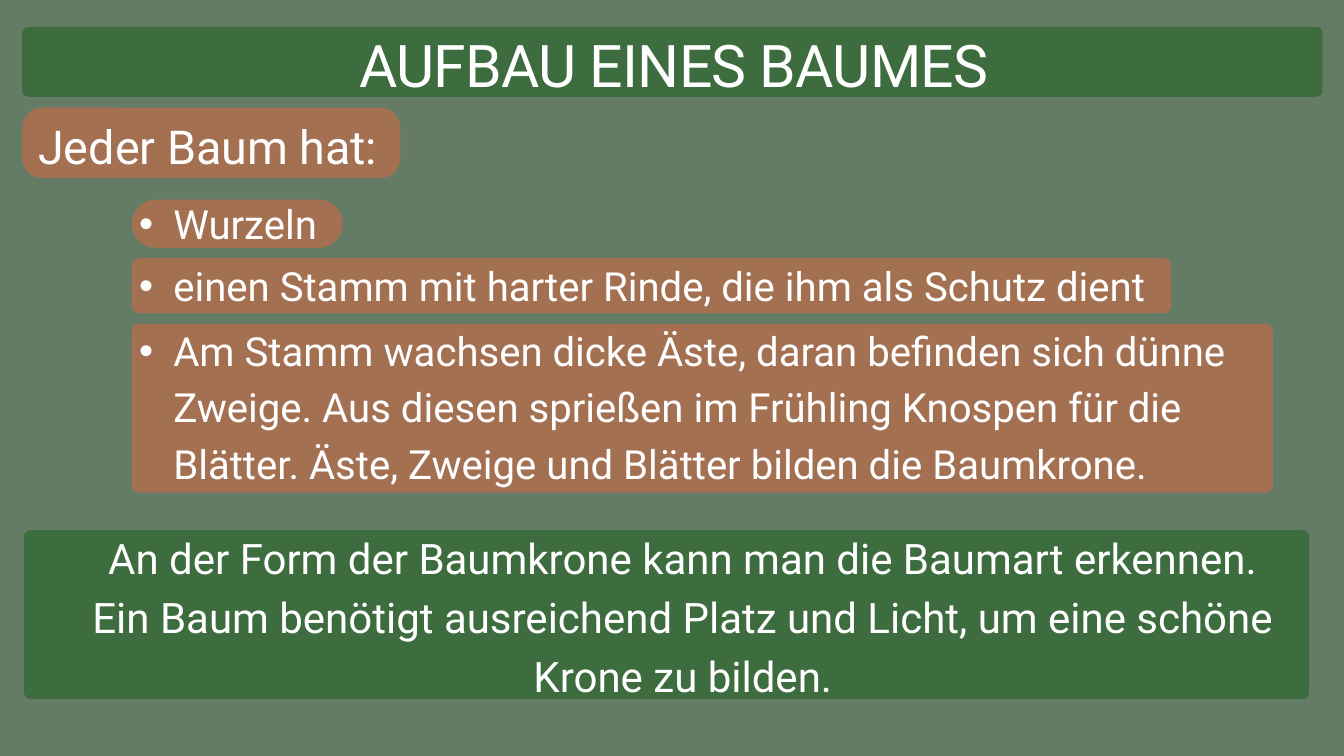
from dataclasses import dataclass

from lxml.etree import SubElement
from pptx import Presentation
from pptx.dml.color import RGBColor
from pptx.enum.shapes import MSO_SHAPE as Shape
from pptx.enum.text import MSO_AUTO_SIZE as AutoSize, PP_ALIGN as Align
from pptx.oxml.ns import qn
from pptx.slide import Slide
from pptx.util import Inches, Pt


@dataclass(frozen=True)
class Theme:
    background: RGBColor = RGBColor(0x64, 0x7B, 0x65)
    green: RGBColor = RGBColor(0x3D, 0x6C, 0x3F)
    brown: RGBColor = RGBColor(0xA4, 0x70, 0x52)
    text: RGBColor = RGBColor(0xFF, 0xFF, 0xFF)
    font: str = "Roboto"
    title_size: float = 63
    intro_size: float = 50
    bullet_size: float = 43
    summary_size: float = 45


@dataclass(frozen=True)
class Box:
    left: float
    top: float
    width: float
    height: float

    def lengths(self) -> list[Inches]:
        return [Inches(v) for v in (self.left, self.top, self.width, self.height)]


@dataclass(frozen=True)
class Panel:
    box: Box
    radius: float
    color: RGBColor


@dataclass(frozen=True)
class TextBlock:
    box: Box
    lines: tuple[str, ...]
    size: float
    line_spacing: float
    align: Align = Align.LEFT
    bullet: bool = False
    tracking: float = 0


THEME = Theme()
BULLET_INDENT = 0.51

PANELS = [
    Panel(Box(0.33, 0.4, 19.35, 1.04), 0.09, THEME.green),
    Panel(Box(0.33, 1.6, 5.63, 1.05), 0.3, THEME.brown),
    Panel(Box(1.96, 2.97, 3.14, 0.72), 0.36, THEME.brown),
    Panel(Box(1.96, 3.84, 15.47, 0.82), 0.11, THEME.brown),
    Panel(Box(1.96, 4.82, 16.98, 2.51), 0.1, THEME.brown),
    Panel(Box(0.36, 7.89, 19.12, 2.51), 0.09, THEME.green),
]


def bullet_block(top: float, width: float, height: float, line: str) -> TextBlock:
    return TextBlock(Box(1.56, top, width, height), (line,),
                     THEME.bullet_size, 60.2, bullet=True)


TEXT_BLOCKS = [
    TextBlock(Box(0.36, 0.43, 19.33, 1.05), ("AUFBAU EINES BAUMES",),
              THEME.title_size, 75, Align.CENTER, tracking=-0.8),
    TextBlock(Box(0.57, 1.61, 5.2, 0.97), ("Jeder Baum hat:",), THEME.intro_size, 70),
    bullet_block(2.85, 4.06, 0.83, "Wurzeln"),
    bullet_block(3.77, 18.13, 0.83,
                 "einen Stamm mit harter Rinde, die ihm als Schutz dient"),
    bullet_block(4.74, 17.28, 2.5,
                 "Am Stamm wachsen dicke Äste, daran befinden sich dünne Zweige. "
                 "Aus diesen sprießen im Frühling Knospen für die Blätter. "
                 "Äste, Zweige und Blätter bilden die Baumkrone."),
    TextBlock(Box(0.6, 7.8, 19.12, 2.61),
              ("An der Form der Baumkrone kann man die Baumart erkennen.",
               "Ein Baum benötigt ausreichend Platz und Licht, "
               "um eine schöne Krone zu bilden."),
              THEME.summary_size, 63, Align.CENTER),
]


def add_panel(slide: Slide, panel: Panel) -> None:
    shape = slide.shapes.add_shape(Shape.ROUNDED_RECTANGLE, *panel.box.lengths())
    shape.adjustments[0] = panel.radius / min(panel.box.width, panel.box.height)
    shape.shadow.inherit = False
    shape.fill.solid()
    shape.fill.fore_color.rgb = panel.color
    shape.line.fill.background()


def add_bullet(paragraph) -> None:
    """Set a second-level bullet with a hanging indent."""
    paragraph.level = 1
    properties = paragraph._p.get_or_add_pPr()
    properties.set("marL", str(Inches(2 * BULLET_INDENT)))
    properties.set("indent", str(Inches(-BULLET_INDENT)))
    SubElement(properties, qn("a:buFont"), typeface="Arial")
    SubElement(properties, qn("a:buChar"), char="•")


def add_text(slide: Slide, block: TextBlock) -> None:
    text_frame = slide.shapes.add_textbox(*block.box.lengths()).text_frame
    text_frame.word_wrap = True
    text_frame.auto_size = AutoSize.SHAPE_TO_FIT_TEXT
    text_frame.margin_left = text_frame.margin_right = 0
    text_frame.margin_top = text_frame.margin_bottom = 0
    text_frame.text = "\n".join(block.lines)
    for paragraph in text_frame.paragraphs:
        paragraph.alignment = block.align
        paragraph.line_spacing = Pt(block.line_spacing)
        if block.bullet:
            add_bullet(paragraph)
        for run in paragraph.runs:
            run.font.name = THEME.font
            run.font.size = Pt(block.size)
            run.font.color.rgb = THEME.text
            if block.tracking:
                run._r.get_or_add_rPr().set("spc", str(round(block.tracking * 100)))


def main() -> None:
    presentation = Presentation()
    presentation.slide_width = Inches(20)
    presentation.slide_height = Inches(11.25)
    slide = presentation.slides.add_slide(presentation.slide_layouts[6])
    slide.background.fill.solid()
    slide.background.fill.fore_color.rgb = THEME.background
    for panel in PANELS:
        add_panel(slide, panel)
    for block in TEXT_BLOCKS:
        add_text(slide, block)
    presentation.save("out.pptx")


if __name__ == "__main__":
    main()
